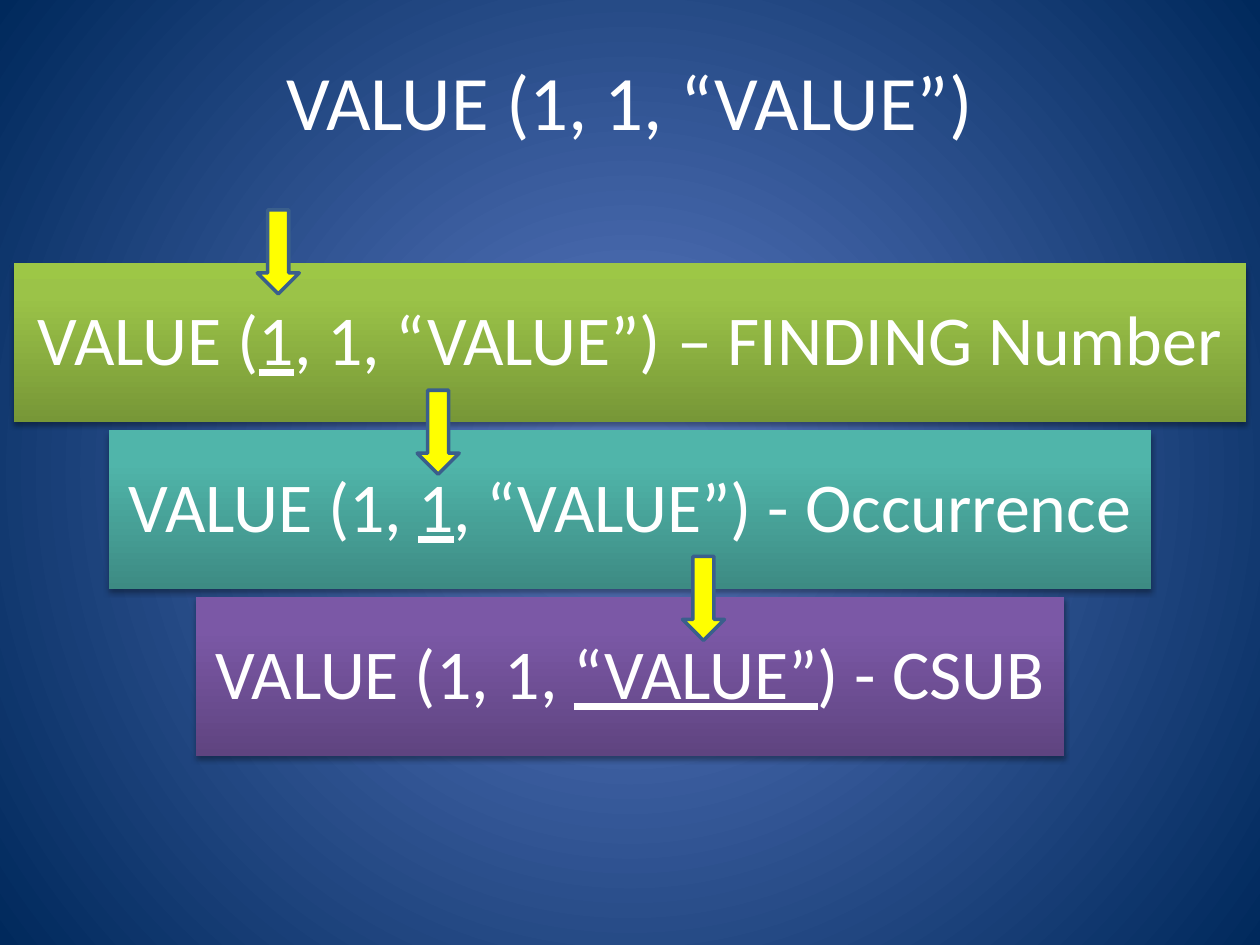
from pptx import Presentation
from pptx.util import Pt
from pptx.dml.color import RGBColor
from pptx.enum import shapes, text
from pptx.oxml.ns import qn
from lxml import etree

TITLE = "VALUE (1, 1, “VALUE”)"
# width, gradient stops, runs (the middle one is underlined), arrow left and top
BARS = [
    (704, [(0, "779737"), (80, "9BC348"), (100, "9DC746")],
     ("VALUE (", "1", ", 1, “VALUE”) – FINDING Number"), (147, 120)),
    (595.6, [(0, "3D8B83"), (80, "50B5AA"), (100, "4EB8AC")],
     ("VALUE (1, ", "1", ", “VALUE”) - Occurrence"), (238.4, 223)),
    (496, [(0, "5F4480"), (80, "7B58A6"), (100, "7C57A8")],
     ("VALUE (1, 1, ", "“VALUE”", ") - CSUB"), (390, 318)),
]
THEME = {
    "font": "Calibri", "text": "FFFFFF", "title": 44, "bar": 40,
    "arrow": "FFFF00", "edge": "3A5F8C", "shade": "000000",
    "back": [(0, "5E7CC5"), (100, "00295C")],
}
WIDE, HIGH = 720, 540
TOP, STEP, TALL = 150.5, 95.4, 90.7
INSET = 8


def rgb(code):
    return RGBColor.from_string(code)


def add(node, tag, **attrs):
    return etree.SubElement(node, qn(tag), {k: str(v) for k, v in attrs.items()})


def blend(fill, root, stops, angle=None):
    """Gradient fill: linear at an angle, or circular from the centre."""
    fill.gradient()
    grad = root.find(".//" + qn("a:gradFill"))
    for child in list(grad):
        grad.remove(child)
    group = add(grad, "a:gsLst")
    for pos, code in stops:
        add(add(group, "a:gs", pos=pos * 1000), "a:srgbClr", val=code)
    if angle is None:
        way = add(grad, "a:path", path="circle")
        add(way, "a:fillToRect", l=50000, t=50000, r=50000, b=50000)
    else:
        add(grad, "a:lin", ang=angle * 60000, scaled=0)


def shade(shape):
    shape.shadow.inherit = False
    glow = add(shape.element.spPr.find(qn("a:effectLst")), "a:outerShdw",
               blurRad=Pt(3.1), dist=Pt(1.8), dir=90 * 60000, rotWithShape=0)
    add(add(glow, "a:srgbClr", val=THEME["shade"]), "a:alpha", val=35000)


def write(para, words, size, under=False):
    run = para.add_run()
    run.text = words
    font = run.font
    font.name, font.size, font.underline = THEME["font"], Pt(size), under
    font.color.rgb = rgb(THEME["text"])


def put_title(slide):
    head = slide.shapes.title
    head.left, head.top, head.width, head.height = Pt(0), Pt(24), Pt(WIDE), Pt(66)
    para = head.text_frame.paragraphs[0]
    para.alignment = text.PP_ALIGN.CENTER
    write(para, TITLE, THEME["title"])


def put_bar(slide, row, width, stops, parts):
    bar = slide.shapes.add_shape(
        shapes.MSO_SHAPE.RECTANGLE, Pt((WIDE - width) / 2), Pt(TOP + row * STEP),
        Pt(width), Pt(TALL))
    blend(bar.fill, bar.element.spPr, stops, 270)
    bar.line.fill.background()
    shade(bar)
    frame = bar.text_frame
    frame.word_wrap = True
    frame.vertical_anchor = text.MSO_ANCHOR.MIDDLE
    frame.margin_left = frame.margin_right = Pt(INSET)
    frame.margin_top = frame.margin_bottom = Pt(INSET)
    para = frame.paragraphs[0]
    para.alignment = text.PP_ALIGN.CENTER
    para.line_spacing = 0.9
    for spot, words in enumerate(parts):
        write(para, words, THEME["bar"], spot == 1)


def put_arrow(slide, left, top):
    arrow = slide.shapes.add_shape(
        shapes.MSO_SHAPE.DOWN_ARROW, Pt(left), Pt(top), Pt(24), Pt(48))
    arrow.shadow.inherit = False
    arrow.fill.solid()
    arrow.fill.fore_color.rgb = rgb(THEME["arrow"])
    arrow.line.color.rgb = rgb(THEME["edge"])
    arrow.line.width = Pt(2)


def main():
    deck = Presentation()
    deck.slide_width, deck.slide_height = Pt(WIDE), Pt(HIGH)
    slide = deck.slides.add_slide(deck.slide_layouts.get_by_name("Title Only"))
    blend(slide.background.fill, slide.element, THEME["back"])
    put_title(slide)
    for row, (width, stops, parts, _) in enumerate(BARS):
        put_bar(slide, row, width, stops, parts)
    for *_, spot in BARS:
        put_arrow(slide, *spot)
    deck.save("out.pptx")


if __name__ == "__main__":
    main()
